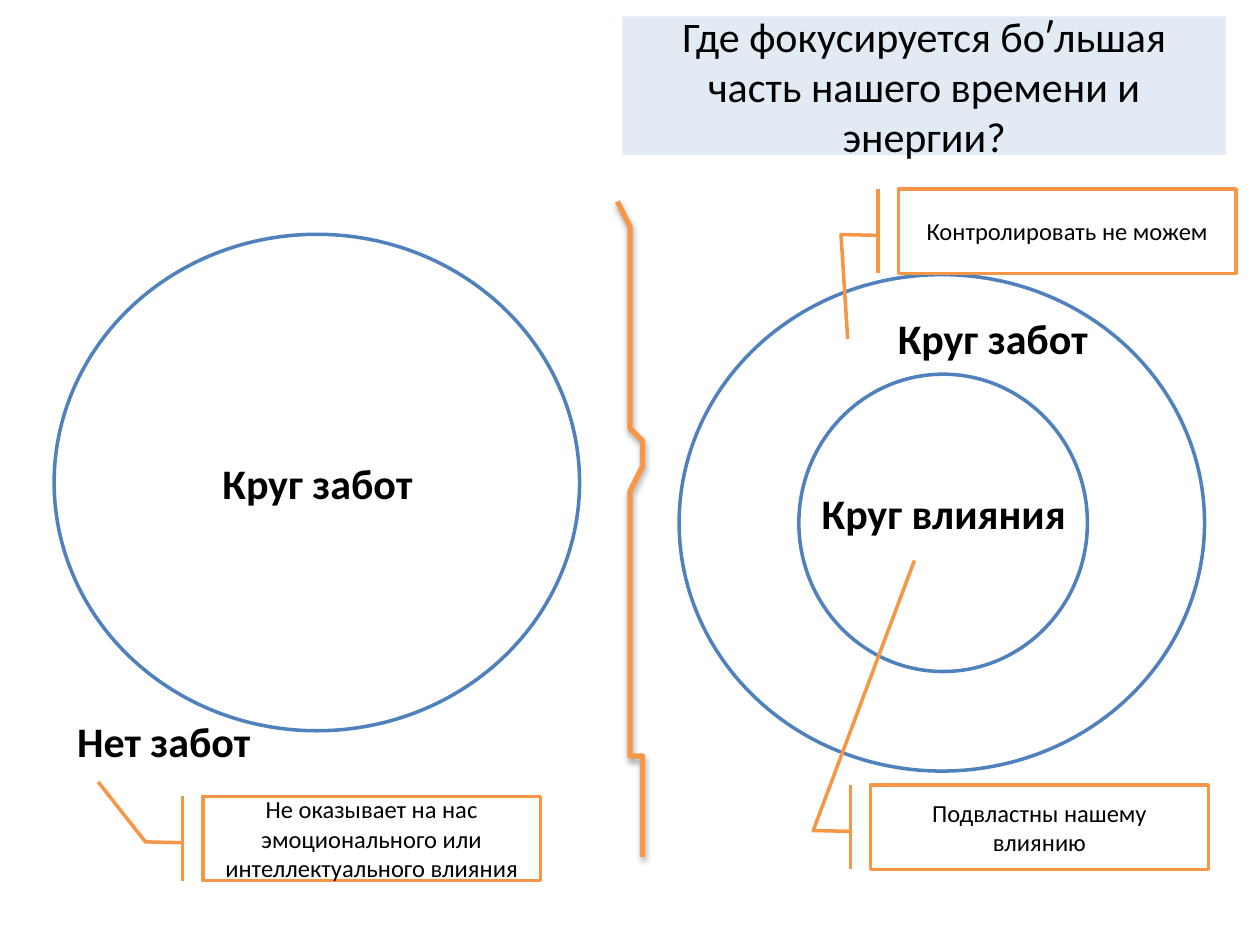
from lxml.etree import SubElement as Sub
from pptx import Presentation
from pptx.dml.color import RGBColor as RGB
from pptx.enum.shapes import MSO_SHAPE as Kind
from pptx.enum.text import MSO_ANCHOR as Anchor, MSO_AUTO_SIZE as Fit, PP_ALIGN as Align
from pptx.oxml.ns import qn
from pptx.util import Pt

HUES = {"blue": "4F81BD", "orange": "F79646", "white": "FFFFFF", "black": "000000"}
HUE = {name: RGB.from_string(code) for name, code in HUES.items()}
FRAME = {"word_wrap": True, "auto_size": Fit.NONE, "vertical_anchor": Anchor.MIDDLE}

deck = Presentation()
deck.slide_width, deck.slide_height = Pt(720), Pt(540)
CELL = deck.slide_width // 100
slide = deck.slides.add_slide(deck.slide_layouts[5])
shapes = slide.shapes


def span(*cells):
    return [round(n * CELL) for n in cells]


def write(shape, text, size, bold=False):
    frame = shape.text_frame
    for key, value in FRAME.items():
        setattr(frame, key, value)
    line = frame.paragraphs[0]
    line.alignment = Align.CENTER
    run = line.add_run()
    run.text = text
    for key, value in {"name": "Calibri", "size": Pt(size), "bold": bold}.items():
        setattr(run.font, key, value)
    run.font.color.rgb = HUE["black"]


title = shapes.title
title.left, title.top, title.width, title.height = span(49.4, 1.3, 47.9, 11)
title.fill.solid()
title.fill.fore_color.rgb = HUE["blue"]
tint = title.fill._xPr.find(qn("a:solidFill"))[0]
Sub(tint, qn("a:alpha"), val="16000")
write(title, "Где фокусируется боʹльшая часть нашего времени и энергии?", 24)

RINGS = [(53.9, 21.8, 41.7, 39.4), (63.4, 29.7, 22.9, 23.6), (4.3, 18.6, 41.7, 39.4)]
for ring in RINGS:
    oval = shapes.add_shape(Kind.OVAL, *span(*ring))
    oval.shadow.inherit = False
    oval.fill.solid()
    oval.fill.fore_color.rgb = HUE["white"]
    oval.line.color.rgb = HUE["blue"]
    oval.line.width = Pt(2)

LABELS = [
    ("Круг забот", 67.3, 23.3),
    ("Круг влияния", 63.4, 37.2),
    ("Круг забот", 13.7, 34.8),
    ("Нет забот", 1.5, 55.3),
]
for text, col, row in LABELS:
    write(shapes.add_textbox(*span(col, row, 23, 7)), text, 24, True)

NOTES = [
    ("Не оказывает на нас эмоционального или интеллектуального влияния", 16.1, 63.2, -0.17, -0.31),
    ("Подвластны нашему влиянию", 69.1, 62.3, -2.66, 0.13),
    ("Контролировать не можем", 71.3, 15, 1.78, -0.15),
]
for text, col, row, tip_y, tip_x in NOTES:
    note = shapes.add_shape(Kind.LINE_CALLOUT_2_BORDER_AND_ACCENT_BAR, *span(col, row, 26.8, 6.7))
    for spot, value in enumerate([0.55, -0.06, 0.54, -0.17, tip_y, tip_x]):
        note.adjustments[spot] = value
    note.shadow.inherit = False
    note.fill.solid()
    note.fill.fore_color.rgb = HUE["white"]
    note.line.color.rgb = HUE["orange"]
    note.line.width = Pt(2)
    write(note, text, 14)

WAVE = [
    (49.4, 16.5), (49.6, 17.6), (49.8, 18.1), (49.9, 18.7), (50.1, 19.6), (50.2, 20.1),
    (50.1, 21.2), (49.8, 22.3), (49.9, 26.2), (50.3, 27.7), (50.4, 28.7), (50.5, 33.7),
    (50.6, 34.6), (50.8, 35.3), (50.7, 36.7), (50.6, 37.1), (50.4, 39.1), (50.3, 41),
    (50.2, 43.1), (50.1, 43.5), (50.3, 46.1), (50.4, 58.8), (50.5, 59.8), (50.7, 60.4),
    (51, 62.3), (51.2, 63.8), (51.3, 67.2), (51.2, 68.4),
]
path = shapes.build_freeform(*WAVE[0], scale=CELL)
path.add_line_segments(WAVE[1:], close=False)
wave = path.convert_to_shape()
wave.fill.background()
wave.line.color.rgb = HUE["orange"]
wave.line.width = Pt(3)

deck.save("out.pptx")
